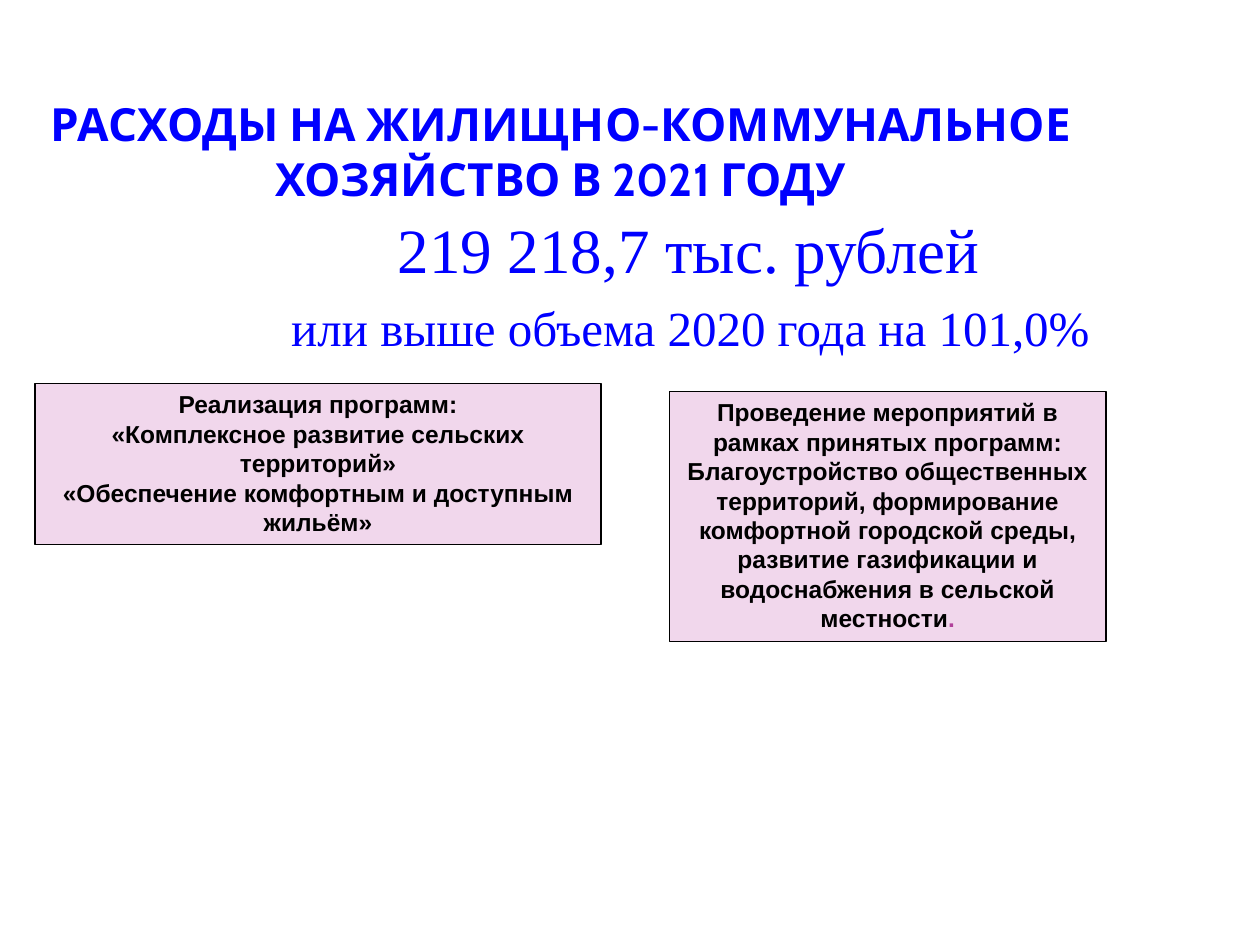
from pptx import Presentation
from pptx import util as u
from pptx.dml.color import RGBColor
from pptx.enum import shapes, text

BLUE, BLACK, PINK, MAGENTA = "0000FF", "000000", "F1D7EC", "B13F9A"


def rgb(value):
    return RGBColor.from_string(value)


class Deck:
    """Holds the text style and the current slide."""

    def __init__(self, width, height):
        self.prs = Presentation()
        self.prs.slide_width, self.prs.slide_height = u.Pt(width), u.Pt(height)
        self.s = self.prs.slides.add_slide(self.prs.slide_layouts[6])

    def add_text(self, sp, paragraphs, font, bold=False, before=0, hang=0):
        tf = sp.text_frame
        tf.word_wrap = True
        for i, runs in enumerate(paragraphs):
            p = tf.add_paragraph() if i else tf.paragraphs[0]
            p.alignment = text.PP_ALIGN.CENTER
            if i and before:
                p.space_before = u.Pt(before)
            if hang:
                pPr = p._p.get_or_add_pPr()
                pPr.set("marL", str(u.Pt(hang)))
                pPr.set("indent", str(u.Pt(-hang)))
            for words, size, color in runs:
                r = p.add_run()
                r.text = words
                r.font.name, r.font.size, r.font.bold = font, u.Pt(size), bold
                r.font.color.rgb = rgb(color)

    def label(self, box, paragraphs, font, anchor=text.MSO_ANCHOR.TOP,
              insets=(7.2, 3.6), **style):
        sp = self.s.shapes.add_textbox(*map(u.Pt, box))
        tf = sp.text_frame
        tf.vertical_anchor = anchor
        tf.margin_left = tf.margin_right = u.Pt(insets[0])
        tf.margin_top = tf.margin_bottom = u.Pt(insets[1])
        self.add_text(sp, paragraphs, font, **style)

    def card(self, box, paragraphs):
        sp = self.s.shapes.add_shape(shapes.MSO_SHAPE.RECTANGLE, *map(u.Pt, box))
        sp.shadow.inherit = False
        sp.fill.solid()
        sp.fill.fore_color.rgb = rgb(PINK)
        sp.line.color.rgb = rgb(BLACK)
        sp.line.width = u.Pt(0.75)
        sp.text_frame.vertical_anchor = text.MSO_ANCHOR.TOP
        sp.text_frame.auto_size = text.MSO_AUTO_SIZE.SHAPE_TO_FIT_TEXT
        self.add_text(sp, [[(words, 14, color) for words, color in runs]
                           for runs in paragraphs], "Arial", bold=True)


def main():
    deck = Deck(720, 540)
    deck.label((20, 15, 601, 102.5),
               [[("РАСХОДЫ НА ЖИЛИЩНО-КОММУНАЛЬНОЕ ХОЗЯЙСТВО В 2021 ГОДУ", 26.1, BLUE)]],
               "Cabin", anchor=text.MSO_ANCHOR.BOTTOM, insets=(3.6, 0), bold=True)
    deck.label((88, 117, 620, 374),
               [[("219 218,7 тыс. рублей ", 36, BLUE)],
                [("или выше объема 2020 года на 101,0% ", 28, BLUE)]],
               "Times New Roman", before=6, hang=21.6)
    deck.card((20, 219, 323.5, 92),
              [[("Реализация программ:", BLACK)],
               [("«Комплексное развитие сельских территорий»", BLACK)],
               [("«Обеспечение комфортным и доступным жильём»", BLACK)]])
    deck.card((382.5, 223.5, 249.5, 143),
              [[("Проведение мероприятий в рамках принятых программ:", BLACK)],
               [("Благоустройство общественных территорий, формирование комфортной "
                 "городской среды, развитие газификации и водоснабжения в сельской "
                 "местности", BLACK), (".", MAGENTA)]])
    deck.prs.save("out.pptx")


if __name__ == "__main__":
    main()
